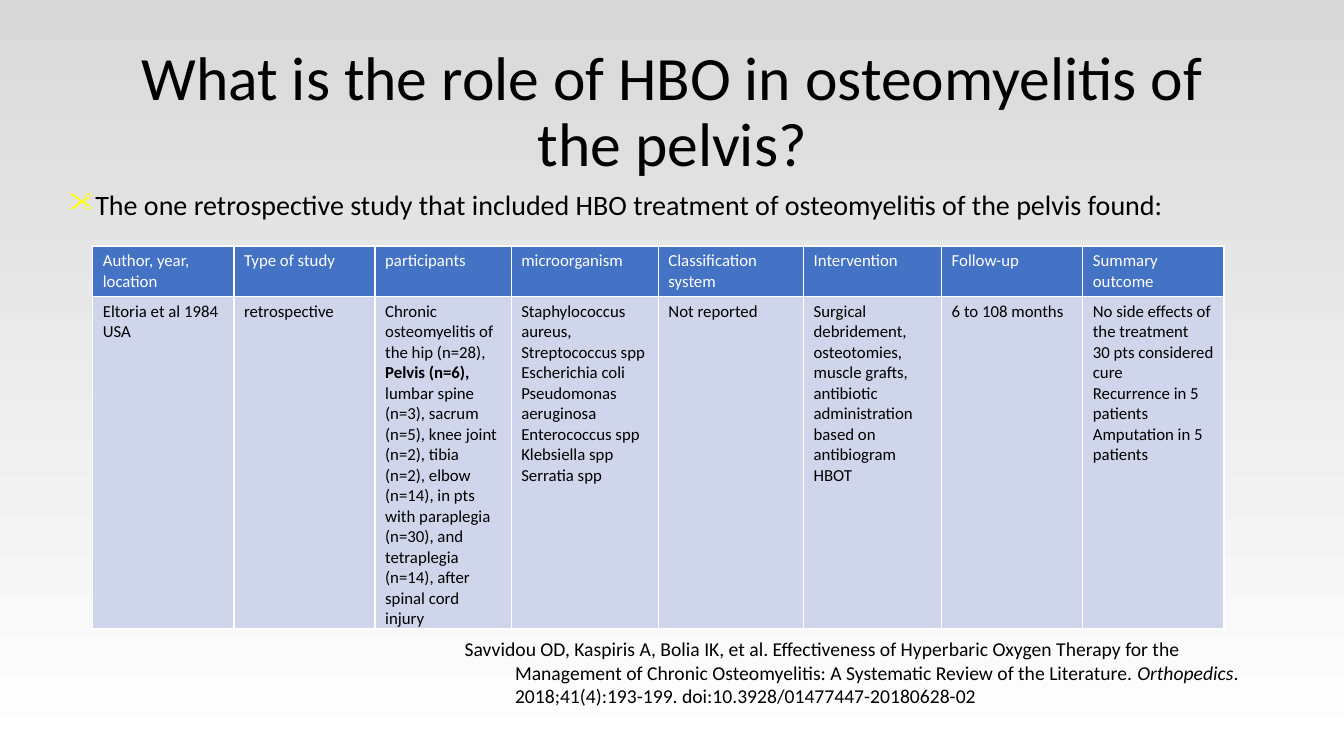
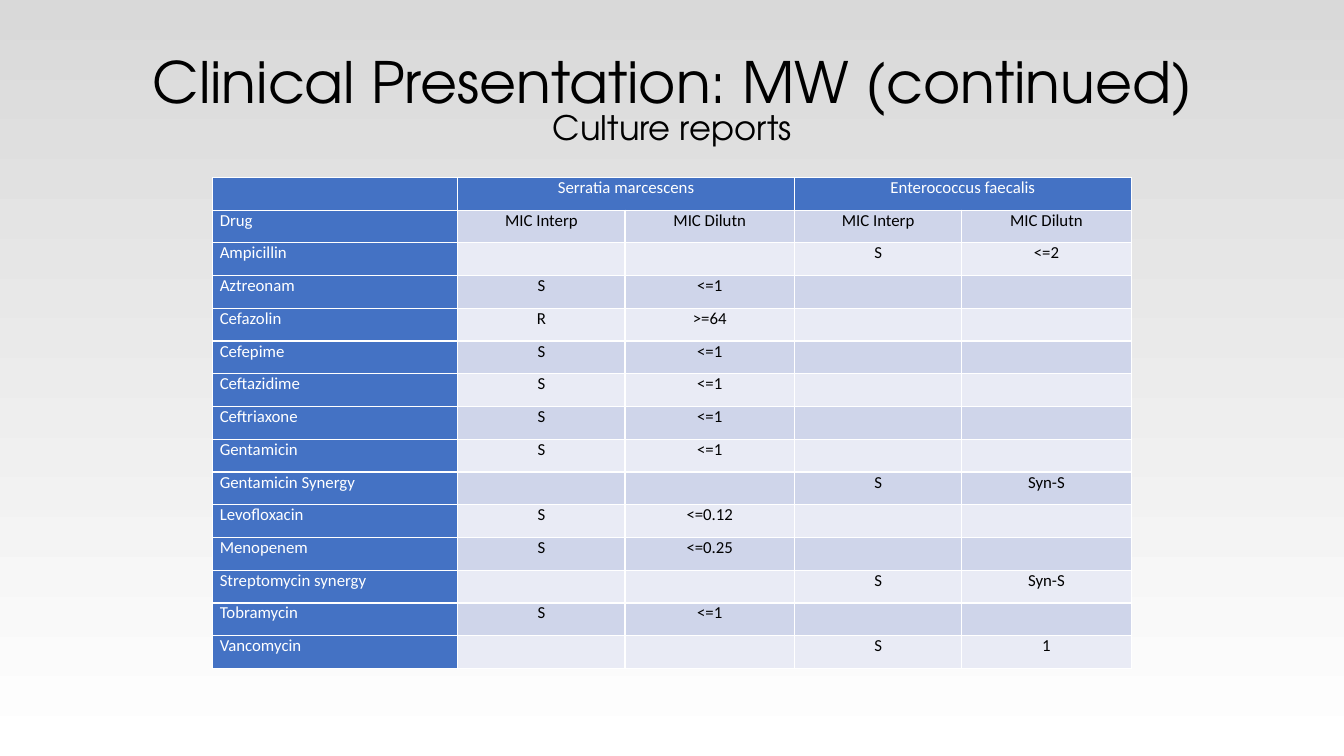
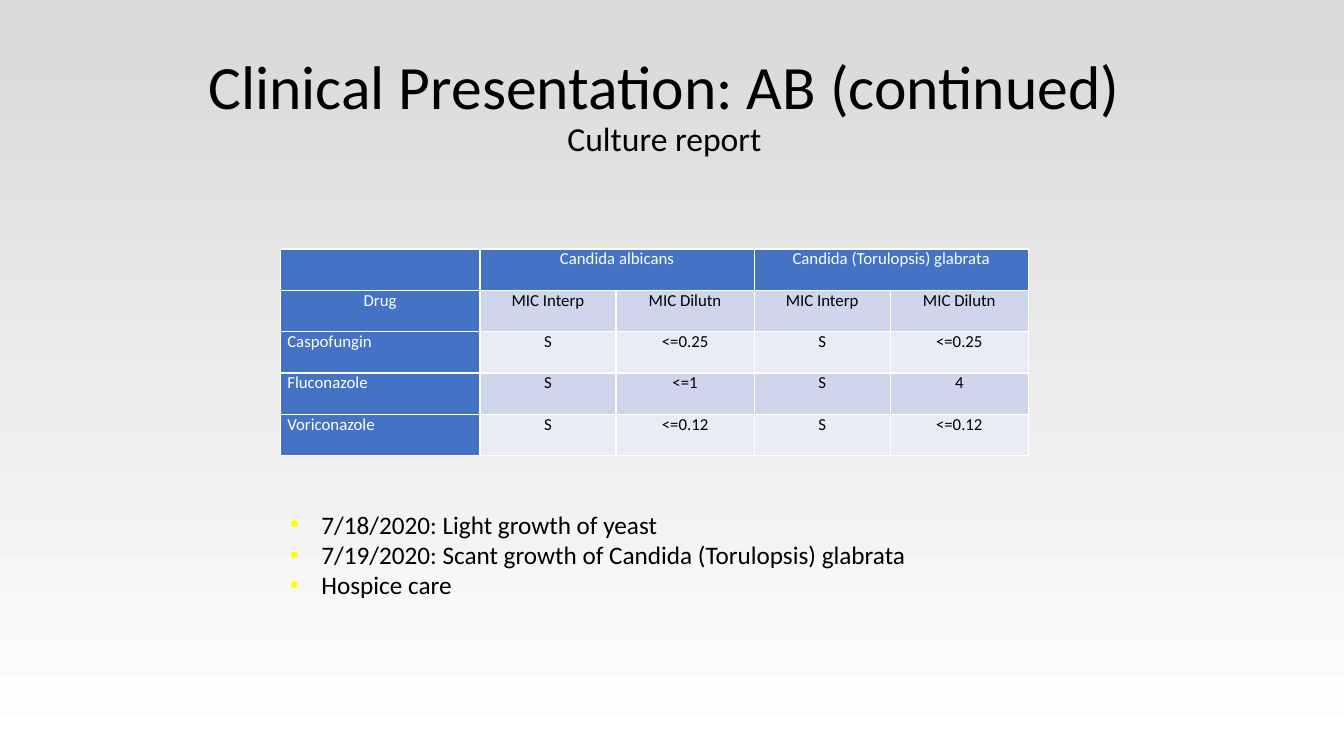
from lxml import etree
from pptx import Presentation
from pptx.dml.color import RGBColor
from pptx.enum import text
from pptx.oxml import ns
from pptx.util import Inches, Pt

BLACK = RGBColor(0x00, 0x00, 0x00)
WHITE = RGBColor(0xFF, 0xFF, 0xFF)
GREY = RGBColor(0xD9, 0xD9, 0xD9)
BLUE = RGBColor(0x44, 0x72, 0xC4)
BANDS = (RGBColor(0xE9, 0xEB, 0xF5), RGBColor(0xCF, 0xD5, 0xEA))
YELLOW = RGBColor(0xFF, 0xFF, 0x00)
BODY_FONT = "Calibri"
LEFT, CENTER = text.PP_ALIGN.LEFT, text.PP_ALIGN.CENTER


def add_element(parent, tag, **attributes):
    return etree.SubElement(parent, ns.qn(tag), attributes)


def write(paragraph, content, size=12, font=BODY_FONT, color=BLACK, align=LEFT,
          spacing=None, before=None, indent=None, bullet_font=None):
    paragraph.alignment = align
    paragraph.line_spacing = spacing
    if before is not None:
        paragraph.space_before = Pt(before)
    properties = paragraph._p.get_or_add_pPr()
    if indent:
        properties.set("marL", str(Inches(indent)))
        properties.set("indent", str(-Inches(indent)))
    if bullet_font:
        color_element = add_element(properties, "a:buClr")
        add_element(color_element, "a:srgbClr", val=str(YELLOW))
        add_element(properties, "a:buFont", typeface=bullet_font)
        add_element(properties, "a:buChar", char="•")
    if not content:
        paragraph._p.get_or_add_endParaRPr().set("sz", str(size * 100))
        return
    for part in [content] if isinstance(content, str) else content:
        words, emphasis = (part, None) if isinstance(part, str) else part
        run = paragraph.add_run()
        run.text = words
        run.font.size = Pt(size)
        run.font.name = font
        run.font.color.rgb = color
        run.font.bold = emphasis == "bold"
        run.font.italic = emphasis == "italic"


def write_all(frame, paragraphs, **style):
    for index, content in enumerate(paragraphs):
        paragraph = frame.add_paragraph() if index else frame.paragraphs[0]
        write(paragraph, content, **style)


class Deck:
    def __init__(self):
        self.presentation = Presentation()
        self.presentation.slide_width = Inches(13.33)
        self.presentation.slide_height = Inches(7.5)
        fill = self.presentation.slide_master.background.fill
        fill.gradient()
        fill.gradient_angle = 90
        for stop, color in zip(fill.gradient_stops, (WHITE, GREY)):
            stop.color.rgb = color
        for stop, position in zip(fill.gradient_stops, (0, 1)):
            stop.position = position
        self.slide = None

    def new_slide(self):
        self.slide = self.presentation.slides.add_slide(self.presentation.slide_layouts[6])

    def text_box(self, box, paragraphs, anchor=text.MSO_ANCHOR.TOP, **style):
        frame = self.slide.shapes.add_textbox(*map(Inches, box)).text_frame
        frame.word_wrap = True
        frame.vertical_anchor = anchor
        write_all(frame, paragraphs, **style)
        return frame

    def title(self, box, heading, subtitle=None, size=44, subtitle_size=24,
              font=BODY_FONT, spacing=0.9):
        style = dict(font=font, align=CENTER, spacing=spacing)
        frame = self.text_box(box, [heading], anchor=text.MSO_ANCHOR.MIDDLE,
                              size=size, **style)
        if subtitle:
            write(frame.add_paragraph(), subtitle, size=subtitle_size, **style)

    def cell(self, cell, content, fill, margins, **style):
        cell.margin_left = cell.margin_right = Inches(margins[0])
        cell.margin_top = cell.margin_bottom = Inches(margins[1])
        properties = cell._tc.get_or_add_tcPr()
        for side in ("a:lnL", "a:lnR", "a:lnT", "a:lnB"):
            line = add_element(properties, side, w=str(Pt(1)))
            add_element(add_element(line, "a:solidFill"), "a:srgbClr", val=str(WHITE))
        cell.fill.solid()
        cell.fill.fore_color.rgb = fill
        paragraphs = content if isinstance(content, list) else [content]
        write_all(cell.text_frame, paragraphs, color=WHITE if fill == BLUE else BLACK, **style)

    def table(self, left, top, widths, heights, rows, header_columns=0,
              margins=(0.1, 0.05), align=lambda row, column: LEFT):
        box = map(Inches, (left, top, sum(widths), sum(heights)))
        table = self.slide.shapes.add_table(len(rows), len(widths), *box).table
        table.first_row = table.horz_banding = False
        for column, width in zip(table.columns, widths):
            column.width = Inches(width)
        for row, height in zip(table.rows, heights):
            row.height = Inches(height)
        for r, values in enumerate(rows):
            for c, value in enumerate(values):
                fill = BLUE if r == 0 or c < header_columns else BANDS[r % 2]
                self.cell(table.cell(r, c), value, fill, margins, align=align(r, c))
        return table

    def culture_table(self, left, top, widths, row_height, organisms, results,
                      drug_align=LEFT):
        first, second = organisms
        rows = [("", first, "", second, ""),
                ("Drug",) + ("MIC Interp", "MIC Dilutn") * 2, *results]

        def align(row, column):
            if column:
                return CENTER
            return drug_align if row == 1 else LEFT

        table = self.table(left, top, widths, [row_height] * len(rows), rows,
                           header_columns=1, margins=(0.07, 0), align=align)
        for column in (1, 3):
            table.cell(0, column).merge(table.cell(0, column + 1))


def study_slide(deck):
    deck.new_slide()
    deck.title((0.92, 0.4, 11.5, 1.45),
               "What is the role of HBO in osteomyelitis of the pelvis?")
    deck.text_box((4.51, 6.27, 8.39, 0.81), [[
        "Savvidou OD, Kaspiris A, Bolia IK, et al. Effectiveness of Hyperbaric Oxygen Therapy "
        "for the Management of Chronic Osteomyelitis: A Systematic Review of the Literature. ",
        ("Orthopedics", "italic"),
        ". 2018;41(4):193-199. doi:10.3928/01477447-20180628-02"]], size=14, indent=0.5)
    deck.text_box((0.58, 1.85, 12.49, 0.5), [
        "The one retrospective study that included HBO treatment of osteomyelitis "
        "of the pelvis found:"],
        size=20, spacing=0.9, before=10, indent=0.25, bullet_font="Wingdings")
    headings = ["Author, year, location", "Type of study", "participants", "microorganism",
                "Classification system", "Intervention", "Follow-up", "Summary outcome"]
    participants = [[
        "Chronic osteomyelitis of the hip (n=28), ", ("Pelvis (n=6), ", "bold"),
        "lumbar spine (n=3), sacrum (n=5), knee joint (n=2), tibia (n=2), elbow (n=14), "
        "in pts with paraplegia (n=30), and tetraplegia (n=14), after spinal cord injury"]]
    microorganisms = ["Staphylococcus aureus, Streptococcus spp", "Escherichia coli",
                      "Pseudomonas aeruginosa", "Enterococcus spp", "Klebsiella spp",
                      "Serratia spp"]
    intervention = ("Surgical debridement, osteotomies, muscle grafts, antibiotic "
                    "administration based on antibiogram HBOT")
    outcome = ["No side effects of the treatment", "30 pts considered cure",
               "Recurrence in 5 patients", "Amputation in 5 patients"]
    study = ["Eltoria et al 1984 USA", "retrospective", participants, microorganisms,
             "Not reported", intervention, "6 to 108 months", outcome]
    deck.table(0.92, 2.44, (1.4, 1.4, 1.35, 1.46, 1.44, 1.37, 1.4, 1.4), (0.5, 3.3),
               [headings, study])


def bacteria_slide(deck):
    deck.new_slide()
    deck.title((0.92, 0.46, 11.5, 1.13), "Clinical Presentation: MW (continued)",
               "Culture reports", size=40.7, subtitle_size=24.1,
               font="TeX Gyre Adventor", spacing=0.8)
    deck.culture_table(
        2.11, 1.76, (2.43, 1.66, 1.68, 1.66, 1.68), 0.325,
        ("Serratia marcescens", "Enterococcus faecalis"), [
            ("Ampicillin", "", "", "S", "<=2"),
            ("Aztreonam", "S", "<=1", "", ""),
            ("Cefazolin", "R", ">=64", "", ""),
            ("Cefepime", "S", "<=1", "", ""),
            ("Ceftazidime", "S", "<=1", "", ""),
            ("Ceftriaxone", "S", "<=1", "", ""),
            ("Gentamicin", "S", "<=1", "", ""),
            ("Gentamicin Synergy", "", "", "S", "Syn-S"),
            ("Levofloxacin", "S", "<=0.12", "", ""),
            ("Menopenem", "S", "<=0.25", "", ""),
            ("Streptomycin synergy", "", "", "S", "Syn-S"),
            ("Tobramycin", "S", "<=1", "", ""),
            ("Vancomycin", "", "", "S", "1")])


def yeast_slide(deck):
    deck.new_slide()
    deck.title((0.84, 0.34, 11.5, 1.45), "Clinical Presentation: AB (continued)",
               "Culture report")
    deck.culture_table(
        2.78, 2.47, (1.98, 1.35, 1.37, 1.35, 1.37), 0.41,
        ("Candida albicans", "Candida (Torulopsis) glabrata"), [
            ("Caspofungin",) + ("S", "<=0.25") * 2,
            ("Fluconazole", "S", "<=1", "S", "4"),
            ("Voriconazole",) + ("S", "<=0.12") * 2],
        drug_align=CENTER)
    deck.text_box((2.78, 5, 6.67, 1.01), [
        "7/18/2020: Light growth of yeast",
        "7/19/2020: Scant growth of Candida (Torulopsis) glabrata",
        "Hospice care"], size=18, indent=0.31, bullet_font="Arial")


def main():
    deck = Deck()
    study_slide(deck)
    bacteria_slide(deck)
    yeast_slide(deck)
    deck.presentation.save("out.pptx")


if __name__ == "__main__":
    main()
